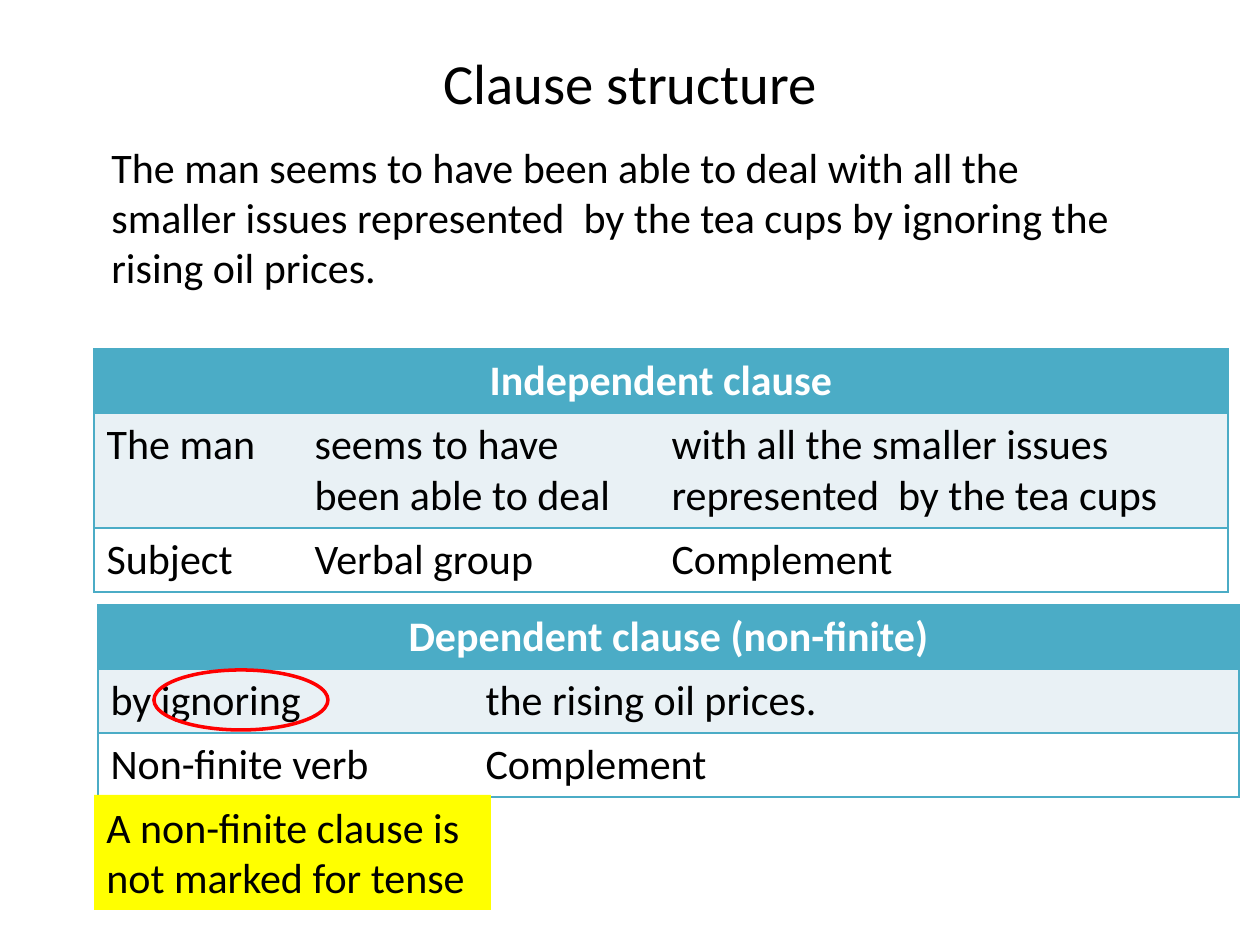
from dataclasses import dataclass

import pptx
import pptx.dml.color
import pptx.enum.shapes
import pptx.enum.text
import pptx.oxml
import pptx.oxml.ns
import pptx.util
from lxml import etree

EMU_PER_PX = 914400 / 126


@dataclass(frozen=True)
class Theme:
    font: str = "Calibri"
    title_size: float = 32.4
    text_size: float = 24
    text: str = "000000"
    white: str = "FFFFFF"
    accent: str = "4BACC6"
    band: str = "E9F1F5"
    note: str = "FFFF00"
    mark: str = "FF0000"


@dataclass(frozen=True)
class Box:
    left: int
    top: int
    width: int
    height: int

    def emu(self) -> tuple:
        return tuple(px(v) for v in (self.left, self.top, self.width, self.height))


@dataclass(frozen=True)
class Clause:
    left: int
    top: int
    cols: tuple
    rows: tuple
    heading: str
    words: tuple
    roles: tuple


THEME = Theme()
CLAUSES = (
    Clause(94, 349, (208, 357, 569), (64, 115, 64), "Independent clause",
           ("The man", "seems to have been able to deal",
            "with all the smaller issues represented  by the tea cups"),
           ("Subject", "Verbal group", "Complement")),
    Clause(98, 605, (375, 375, 391), (64, 64, 64), "Dependent clause (non-finite)",
           ("by ignoring", "the rising oil prices.", ""),
           ("Non-finite verb", "Complement", "")),
)


def px(value: int) -> pptx.util.Emu:
    return pptx.util.Emu(round(value * EMU_PER_PX))


def rgb(value: str) -> pptx.dml.color.RGBColor:
    return pptx.dml.color.RGBColor.from_string(value)


def write(tf, text: str, size: float = THEME.text_size, color: str = THEME.text,
          bold: bool = False, align=pptx.enum.text.PP_ALIGN.LEFT) -> None:
    tf.text = text
    tf.word_wrap = True
    for p in tf.paragraphs:
        p.alignment = align
        for r in p.runs:
            r.font.name = THEME.font
            r.font.size = pptx.util.Pt(size)
            r.font.bold = bold
            r.font.color.rgb = rgb(color)


def set_borders(cell, first: bool, last: bool) -> None:
    tc_pr = cell._tc.get_or_add_tcPr()
    sides = (("lnL", first), ("lnR", last), ("lnT", True), ("lnB", True))
    for i, (side, visible) in enumerate(sides):
        ln = etree.Element(pptx.oxml.ns.qn(f"a:{side}"), w=str(pptx.util.Pt(1)))
        if visible:
            fill = etree.SubElement(ln, pptx.oxml.ns.qn("a:solidFill"))
            etree.SubElement(fill, pptx.oxml.ns.qn("a:srgbClr"), val=THEME.accent)
        else:
            etree.SubElement(ln, pptx.oxml.ns.qn("a:noFill"))
        tc_pr.insert(i, ln)


def add_clause(slide, clause: Clause) -> None:
    box = Box(clause.left, clause.top, sum(clause.cols), sum(clause.rows))
    n = len(clause.cols)
    table = slide.shapes.add_table(len(clause.rows), n, *box.emu()).table
    for col, width in zip(table.columns, clause.cols):
        col.width = px(width)
    for row, height in zip(table.rows, clause.rows):
        row.height = px(height)

    fills = (THEME.accent, THEME.band, THEME.white)
    for r, fill in enumerate(fills):
        for c in range(n):
            cell = table.cell(r, c)
            cell.fill.solid()
            cell.fill.fore_color.rgb = rgb(fill)
            set_borders(cell, r == 0 or c == 0, r == 0 or c == n - 1)

    head = table.cell(0, 0)
    head.merge(table.cell(0, n - 1))
    head.vertical_anchor = pptx.enum.text.MSO_ANCHOR.MIDDLE
    write(head.text_frame, clause.heading, color=THEME.white, bold=True,
          align=pptx.enum.text.PP_ALIGN.CENTER)
    for r, texts in enumerate((clause.words, clause.roles), start=1):
        for c, text in enumerate(texts):
            write(table.cell(r, c).text_frame, text)


def add_title(slide, text: str, box: Box) -> None:
    sp = slide.shapes.title
    sp.left, sp.top, sp.width, sp.height = box.emu()
    write(sp.text_frame, text, size=THEME.title_size, align=pptx.enum.text.PP_ALIGN.CENTER)
    sp.text_frame.vertical_anchor = pptx.enum.text.MSO_ANCHOR.MIDDLE


def add_text(slide, text: str, box: Box, fill: str | None = None) -> None:
    sp = slide.shapes.add_textbox(*box.emu())
    if fill:
        sp.fill.solid()
        sp.fill.fore_color.rgb = rgb(fill)
    write(sp.text_frame, text)


def add_ring(slide, box: Box) -> None:
    sp = slide.shapes.add_shape(pptx.enum.shapes.MSO_SHAPE.OVAL, *box.emu())
    sp.shadow.inherit = False
    sp.fill.background()
    sp.line.color.rgb = rgb(THEME.mark)
    sp.line.width = pptx.util.Pt(2)


def main() -> None:
    prs = pptx.Presentation()
    prs.slide_width, prs.slide_height = px(1260), px(945)
    slide = prs.slides.add_slide(prs.slide_layouts.get_by_name("Title Only"))
    add_title(slide, "Clause structure", Box(63, 38, 1134, 87))
    for clause in CLAUSES:
        add_clause(slide, clause)
    add_ring(slide, Box(154, 670, 174, 60))
    add_text(slide, "A non-finite clause is not marked for tense",
             Box(94, 795, 397, 115), THEME.note)
    add_text(slide, "The man seems to have been able to deal with all the smaller issues "
             "represented  by the tea cups by ignoring the rising oil prices.",
             Box(99, 135, 1057, 165))
    prs.save("out.pptx")


if __name__ == "__main__":
    main()
